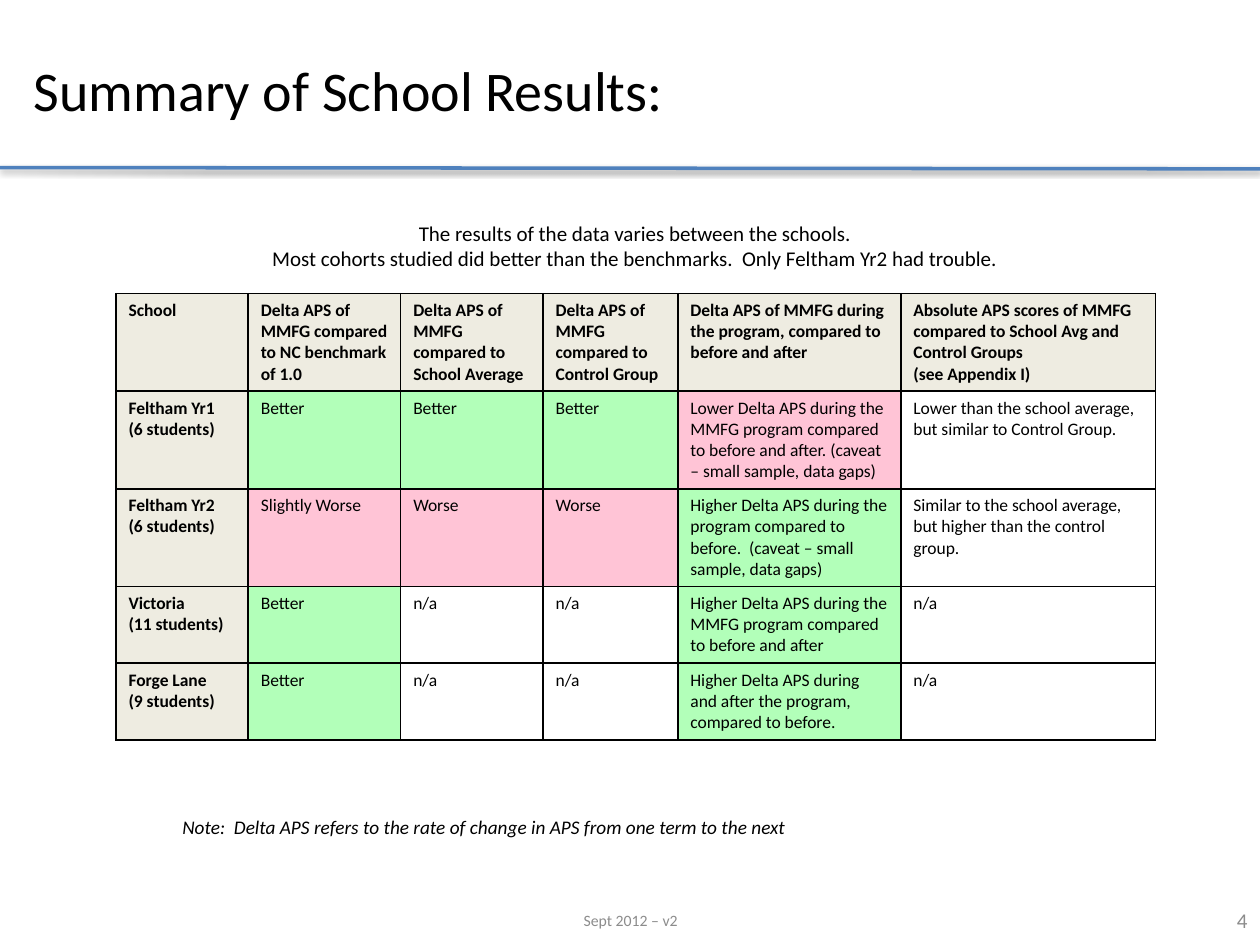
"""Build the slide that sums up the school results."""
from dataclasses import dataclass

from lxml import etree
from pptx import Presentation
from pptx.dml.color import RGBColor
from pptx.enum.shapes import MSO_CONNECTOR
from pptx.enum.text import MSO_ANCHOR, PP_ALIGN
from pptx.oxml.ns import nsdecls
from pptx.util import Inches, Pt

LEFT, MID, RIGHT = PP_ALIGN.LEFT, PP_ALIGN.CENTER, PP_ALIGN.RIGHT
TOP, CENTRE = MSO_ANCHOR.TOP, MSO_ANCHOR.MIDDLE
STRAIGHT = MSO_CONNECTOR.STRAIGHT


@dataclass(frozen=True)
class Theme:
    font: str = "Calibri"
    ink: str = "000000"
    grey: str = "8C8C8C"
    rule: str = "4F81BD"
    head: str = "EEECE1"
    good: str = "B2FFB9"
    bad: str = "FFC4D6"
    title: int = 32
    body: int = 12
    note: int = 11
    cell: int = 10
    foot: int = 9


LOOK = Theme()
WIDE, HIGH = Inches(10), Inches(7.5)

TITLE = "Summary of School Results:"
INTRO = (
    "The results of the data varies between the schools.\n"
    "Most cohorts studied did better than the benchmarks.  Only Feltham Yr2 had trouble."
)
NOTE = "Note:  Delta APS refers to the rate of change in APS from one term to the next"
FOOT = "Sept 2012 – v2"
PAGE = "4"

GRID = [
    ["School",
     "Delta APS of MMFG compared to NC benchmark of 1.0",
     "Delta APS of MMFG compared to School Average",
     "Delta APS of MMFG compared to Control Group",
     "Delta APS of MMFG during the program, compared to before and after",
     "Absolute APS scores of MMFG compared to School Avg and Control Groups\n(see Appendix I)"],
    ["Feltham Yr1\n(6 students)", "Better", "Better", "Better",
     "Lower Delta APS during the MMFG program compared to before and after. "
     "(caveat – small sample, data gaps)",
     "Lower than the school average, but similar to Control Group."],
    ["Feltham Yr2\n(6 students)", "Slightly Worse", "Worse", "Worse",
     "Higher Delta APS during the program compared to before.  "
     "(caveat – small sample, data gaps)",
     "Similar to the school average, but higher than the control group."],
    ["Victoria\n(11 students)", "Better", "n/a", "n/a",
     "Higher Delta APS during the MMFG program compared to before and after", "n/a"],
    ["Forge Lane\n(9 students)", "Better", "n/a", "n/a",
     "Higher Delta APS during and after the program, compared to before.", "n/a"],
]
TONES = ["HHHHHH", "HGGGB-", "HBBBG-", "HG--G-", "HG--G-"]
FILLS = {"H": LOOK.head, "G": LOOK.good, "B": LOOK.bad}
COLS = [10.5, 12.1, 11.3, 10.7, 17.7, 20.2]
ROWS = [10.33, 10.33, 10.33, 8.13, 8.13]

BOXES = [
    (TITLE, (1.7, 1.07, 61.7, 16.67), dict(size=LOOK.title, anchor=CENTRE)),
    (INTRO, (8.3, 22.67, 84.2, 6.67), dict(align=MID)),
    (NOTE, (8.1, 85.6, 55.3, 3.87), dict(size=LOOK.note, align=RIGHT, italic=True)),
    (FOOT, (34.2, 94.67, 31.7, 5.33),
     dict(size=LOOK.foot, color=LOOK.grey, align=MID, anchor=CENTRE)),
    (PAGE, (76.7, 94.67, 23.3, 5.33),
     dict(color=LOOK.grey, align=RIGHT, anchor=CENTRE)),
]


def across(share):
    return round(WIDE * share / 100)


def down(share):
    return round(HIGH * share / 100)


def place(box):
    x, y, w, h = box
    return across(x), down(y), across(w), down(h)


def write(frame, text, size=LOOK.body, color=LOOK.ink, bold=False,
          italic=False, align=LEFT, anchor=TOP):
    frame.word_wrap = True
    frame.vertical_anchor = anchor
    frame.text = text
    for para in frame.paragraphs:
        para.alignment = align
        font = para.runs[0].font
        font.name, font.size = LOOK.font, Pt(size)
        font.bold, font.italic = bold, italic
        font.color.rgb = RGBColor.from_string(color)


def edge(cell):
    props = cell._tc.get_or_add_tcPr()
    for side in "LRTB":
        props.append(etree.fromstring(
            f'<a:ln{side} {nsdecls("a")} w="{Pt(1)}"><a:solidFill>'
            f'<a:srgbClr val="{LOOK.ink}"/></a:solidFill></a:ln{side}>'))


def draw_rule(slide):
    rule = slide.shapes.add_connector(STRAIGHT, 0, down(17.73), WIDE, down(17.87))
    rule.line.width = Pt(2)
    rule.line.color.rgb = RGBColor.from_string(LOOK.rule)
    rule._element.spPr.append(etree.fromstring(
        f'<a:effectLst {nsdecls("a")}><a:outerShdw blurRad="{Pt(3.1)}" '
        f'dist="{Pt(1.6)}" dir="5400000" rotWithShape="0"><a:srgbClr val="{LOOK.ink}">'
        '<a:alpha val="38000"/></a:srgbClr></a:outerShdw></a:effectLst>'))


def draw_table(slide):
    box = place((9.2, 31.07, sum(COLS), sum(ROWS)))
    table = slide.shapes.add_table(len(ROWS), len(COLS), *box).table
    for col, share in zip(table.columns, COLS):
        col.width = across(share)
    for row, share, texts, tones in zip(table.rows, ROWS, GRID, TONES):
        row.height = down(share)
        for cell, text, tone in zip(row.cells, texts, tones):
            write(cell.text_frame, text, size=LOOK.cell, bold=tone == "H")
            edge(cell)
            if tone in FILLS:
                cell.fill.solid()
                cell.fill.fore_color.rgb = RGBColor.from_string(FILLS[tone])
            else:
                cell.fill.background()


def main():
    deck = Presentation()
    deck.slide_width, deck.slide_height = WIDE, HIGH
    slide = deck.slides.add_slide(deck.slide_layouts[6])
    draw_rule(slide)
    draw_table(slide)
    for text, box, form in BOXES:
        write(slide.shapes.add_textbox(*place(box)).text_frame, text, **form)
    deck.save("out.pptx")


if __name__ == "__main__":
    main()
